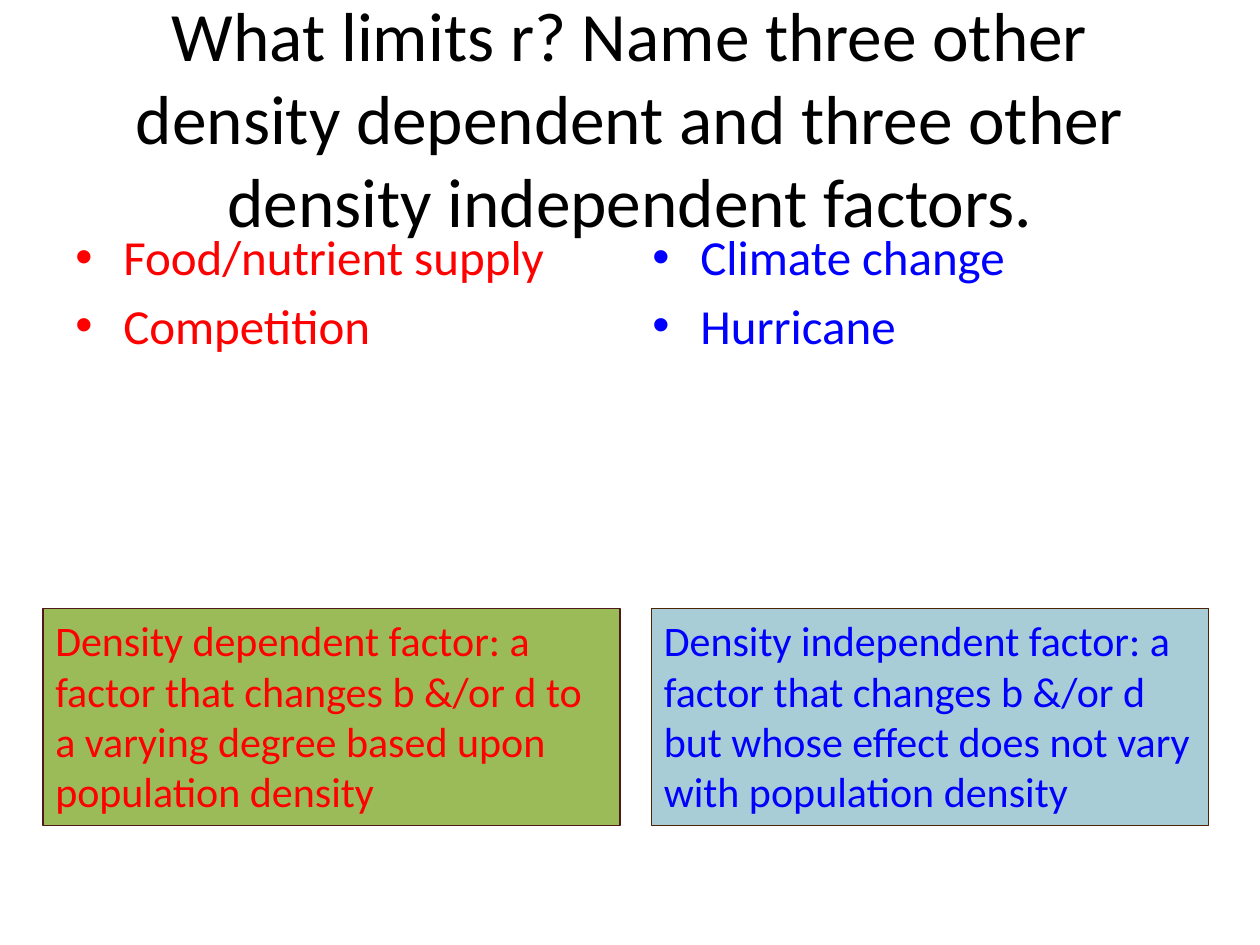
from lxml import etree
from pptx import Presentation
from pptx.dml.color import RGBColor
from pptx.enum.shapes import MSO_SHAPE
from pptx.enum.text import MSO_ANCHOR, PP_ALIGN
from pptx.oxml.ns import qn
from pptx.util import Inches, Pt

RECTANGLE = MSO_SHAPE.RECTANGLE
TOP, MIDDLE = MSO_ANCHOR.TOP, MSO_ANCHOR.MIDDLE
LEFT, CENTER = PP_ALIGN.LEFT, PP_ALIGN.CENTER
FONT = "Calibri"
BLACK, RED, BLUE = "000000", "FF0000", "0000FF"
GREEN, PALE_BLUE = "9BBB59", "A8CDD7"
BULLET_INDENT = Inches(0.38)


def rgb(hex_color):
    return RGBColor.from_string(hex_color)


def set_frame(frame, anchor):
    frame.word_wrap = True
    frame.vertical_anchor = anchor


def write(paragraph, text, size, color, align=LEFT):
    paragraph.alignment = align
    run = paragraph.add_run()
    run.text = text
    run.font.name = FONT
    run.font.size = Pt(size)
    run.font.color.rgb = rgb(color)


def add_bullet(paragraph):
    properties = paragraph._p.get_or_add_pPr()
    properties.set("marL", str(BULLET_INDENT))
    properties.set("indent", str(-BULLET_INDENT))
    etree.SubElement(properties, qn("a:buFont")).set("typeface", "Arial")
    etree.SubElement(properties, qn("a:buChar")).set("char", "•")


def add_title(slide, text):
    title = slide.shapes.add_textbox(Inches(0.5), Inches(0.3), Inches(9), Inches(1.25))
    set_frame(title.text_frame, MIDDLE)
    write(title.text_frame.paragraphs[0], text, 39.6, BLACK, CENTER)


def add_factor_list(slide, left, factors, color):
    box = slide.shapes.add_textbox(Inches(left), Inches(1.75), Inches(4.42), Inches(4.95))
    frame = box.text_frame
    set_frame(frame, TOP)
    for index, factor in enumerate(factors):
        paragraph = frame.add_paragraph() if index else frame.paragraphs[0]
        paragraph.space_before = Pt(5.6)
        add_bullet(paragraph)
        write(paragraph, factor, 28, color)


def add_definition(slide, left, width, text, color, fill, border):
    panel = slide.shapes.add_shape(
        RECTANGLE, Inches(left), Inches(4.83), Inches(width), Inches(1.72))
    panel.shadow.inherit = False
    panel.fill.solid()
    panel.fill.fore_color.rgb = rgb(fill)
    panel.line.color.rgb = rgb(border)
    panel.line.width = Pt(0.75)
    set_frame(panel.text_frame, TOP)
    write(panel.text_frame.paragraphs[0], text, 24, color)


def main():
    deck = Presentation()
    deck.slide_width, deck.slide_height = Inches(10), Inches(7.5)
    slide = deck.slides.add_slide(deck.slide_layouts[6])

    # Question
    add_title(slide, "What limits r? Name three other density dependent "
                     "and three other density independent factors.")

    # Example factors
    add_factor_list(slide, 0.5, ["Food/nutrient supply", "Competition"], RED)
    add_factor_list(slide, 5.08, ["Climate change", "Hurricane"], BLUE)

    # Definitions
    add_definition(slide, 0.34, 4.58,
                   "Density dependent factor: a factor that changes b &/or d "
                   "to a varying degree based upon population density",
                   RED, GREEN, "4F1919")
    add_definition(slide, 5.17, 4.42,
                   "Density independent factor: a factor that changes b &/or d "
                   "but whose effect does not vary with population density",
                   BLUE, PALE_BLUE, "4C2403")

    deck.save("out.pptx")


if __name__ == "__main__":
    main()
